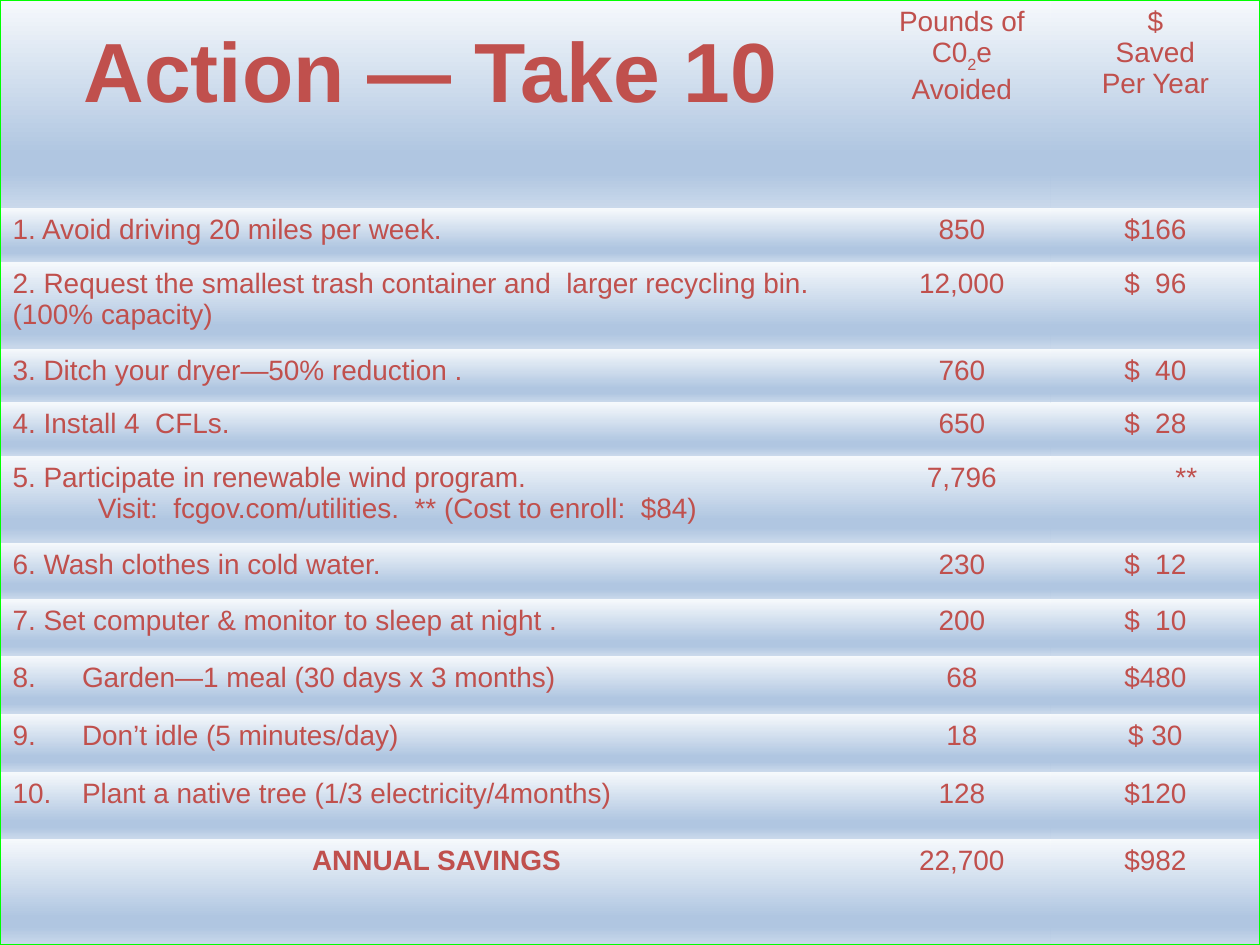
from lxml.etree import SubElement as Sub
from pptx import Presentation
from pptx.dml.color import RGBColor
from pptx.enum.text import PP_ALIGN as Align
from pptx.oxml.ns import qn
from pptx.util import Cm, Pt

RED = RGBColor(0xC0, 0x50, 0x4D)
GREEN = RGBColor(0x00, 0xFF, 0x00)
PALE = RGBColor(0xF6, 0xF9, 0xFC)
BLUE = RGBColor(0xB0, 0xC6, 0xE1)
LIGHT = RGBColor(0xCA, 0xD9, 0xEB)
STOPS = [(0, PALE), (74, BLUE), (83, BLUE), (100, LIGHT)]
PLAIN = "{2D5ABB26-0587-4C30-8999-92F81FD0307C}"  # table style without grid

COLS = [17.6, 3.58, 4.22]
HEAD, FOOT = 4.2, 2.14
TAB = 1.4

# Height, action, pounds avoided, dollars saved
ROWS = [
    (1.08, "1. Avoid driving 20 miles per week.", "850", "$166"),
    (1.75, "2. Request the smallest trash container and  larger recycling bin.  "
           "(100% capacity)", "12,000", "$  96"),
    (1.08, "3. Ditch your dryer—50% reduction .", "760", "$  40"),
    (1.08, "4. Install 4  CFLs.", "650", "$  28"),
    (1.75, "5. Participate in renewable wind program.", "7,796", "**"),
    (1.14, "6. Wash clothes in cold water.", "230", "$  12"),
    (1.14, "7. Set computer & monitor to sleep at night .", "200", "$  10"),
    (1.17, "8.\tGarden—1 meal (30 days x 3 months)", "68", "$480"),
    (1.17, "9.\tDon’t idle (5 minutes/day)", "18", "$ 30"),
    (1.35, "10.\tPlant a native tree (1/3 electricity/4months)", "128", "$120"),
]
VISIT = "Visit:  fcgov.com/utilities.  ** (Cost to enroll:  $84)"


def write(cell, text, size=16, bold=False, align=Align.CENTER, indent=0,
          more=False, sub=None):
    """Write one paragraph; sub is a part of the text to set as subscript."""
    frame = cell.text_frame
    para = frame.add_paragraph() if more else frame.paragraphs[0]
    props = para._p.get_or_add_pPr()
    if indent:
        props.set("marL", str(Cm(indent)))
        props.set("indent", "0")
    if "\t" in text:
        tabs = Sub(props, qn("a:tabLst"))
        Sub(tabs, qn("a:tab"), pos=str(Cm(TAB)), algn="l")
    para.alignment = align
    parts = [text]
    if sub:
        start, end = text.split(sub)
        parts = [start, sub, end]
    for part in parts:
        run = para.add_run()
        run.text = part
        font = run.font
        font.name, font.size, font.bold = "Arial", Pt(size), bold
        font.color.rgb = RED
        if part == sub:
            run._r.get_or_add_rPr().set("baseline", "-30000")


def color(node, rgb):
    Sub(node, qn("a:srgbClr"), val=str(rgb))


def paint(cell, sides):
    """Draw green lines on the given sides, then the gradient."""
    props = cell._tc.get_or_add_tcPr()
    for side in sides:
        line = Sub(props, qn(f"a:ln{side}"), w=str(Pt(1)))
        color(Sub(line, qn("a:solidFill")), GREEN)
    grad = Sub(props, qn("a:gradFill"), rotWithShape="1")
    stops = Sub(grad, qn("a:gsLst"))
    for pos, rgb in STOPS:
        color(Sub(stops, qn("a:gs"), pos=str(pos * 1000)), rgb)
    Sub(grad, qn("a:lin"), ang="5400000", scaled="0")


def make_grid(slide):
    high = [HEAD, *(row[0] for row in ROWS), FOOT]
    shape = slide.shapes.add_table(len(high), len(COLS), 0, 0,
                                   Cm(sum(COLS)), Cm(sum(high)))
    grid = shape.table
    grid.first_row = grid.horz_banding = False
    grid._tbl.tblPr.find(qn("a:tableStyleId")).text = PLAIN
    for col, width in zip(grid.columns, COLS):
        col.width = Cm(width)
    for row, height in zip(grid.rows, high):
        row.height = Cm(height)

    # Outer frame and gradient
    last, right = len(high) - 1, len(COLS) - 1
    for r in range(len(high)):
        for c in range(len(COLS)):
            edges = {"L": c == 0, "R": c == right, "T": r == 0, "B": r == last}
            paint(grid.cell(r, c), [side for side, on in edges.items() if on])
    return grid


def fill_head(grid):
    title = grid.cell(0, 0)
    title.margin_top, title.margin_right = Cm(0.53), Cm(0.5)
    write(title, "Action — Take 10", size=48, bold=True)
    write(grid.cell(0, 1), "Pounds of C02e Avoided", sub="2")
    for i, text in enumerate(["$", "Saved", "Per Year"]):
        write(grid.cell(0, 2), text, more=i > 0)


def fill_body(grid):
    for r, (_, action, pounds, saved) in enumerate(ROWS, 1):
        write(grid.cell(r, 0), action, align=Align.LEFT)
        write(grid.cell(r, 1), pounds)
        write(grid.cell(r, 2), saved, indent=1.25 if saved == "**" else 0)
    write(grid.cell(5, 0), VISIT, align=Align.LEFT, indent=1.72, more=True)


def fill_foot(grid):
    r = len(ROWS) + 1
    write(grid.cell(r, 0), "ANNUAL SAVINGS", bold=True)
    write(grid.cell(r, 1), "22,700")
    write(grid.cell(r, 2), "$982")


def main():
    deck = Presentation()
    deck.slide_width, deck.slide_height = Cm(25.4), Cm(19.05)
    slide = deck.slides.add_slide(deck.slide_layouts[6])
    grid = make_grid(slide)
    fill_head(grid)
    fill_body(grid)
    fill_foot(grid)
    deck.save("out.pptx")


if __name__ == "__main__":
    main()
